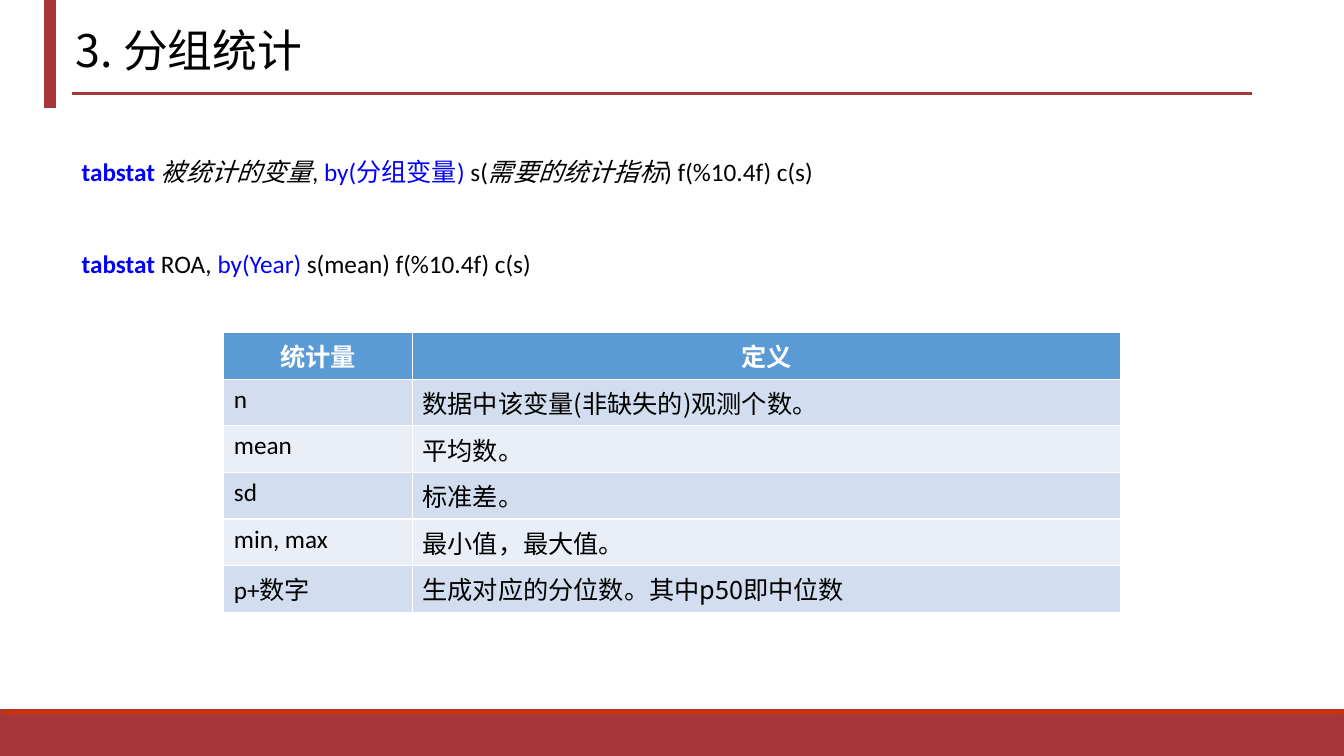
import dataclasses

import lxml.etree
import pptx
import pptx.dml.color
import pptx.enum.shapes
import pptx.enum.text
import pptx.oxml.ns
import pptx.util

Inches = pptx.util.Inches
Pt = pptx.util.Pt
Color = pptx.dml.color.RGBColor.from_string


@dataclasses.dataclass(frozen=True)
class Theme:
    red: str = "A6363A"
    orange: str = "CC3300"
    keyword: str = "0000FF"
    text: str = "000000"
    header_text: str = "FFFFFF"
    header_fill: str = "5B9BD5"
    bands: tuple = ("D2DEEF", "EAEFF7")
    latin: str = "Calibri"
    chinese: str = "Noto Sans CJK SC"
    title_size: int = 32
    body_size: int = 18


THEME = Theme()

COMMANDS = [
    [
        ("tabstat ", "keyword", "bold"),
        ("被统计的变量", "text", "italic"),
        (", ", "text", ""),
        ("by(分组变量) ", "keyword", ""),
        ("s(", "text", ""),
        ("需要的统计指标", "text", "italic"),
        (") f(%10.4f) c(s)", "text", ""),
    ],
    [
        ("tabstat", "keyword", "bold"),
        (" ROA, ", "text", ""),
        ("by(Year)", "keyword", ""),
        (" s(mean) f(%10.4f) c(s)", "text", ""),
    ],
]

STATISTICS = [
    ("统计量", "定义"),
    ("n", "数据中该变量(非缺失的)观测个数。"),
    ("mean", "平均数。"),
    ("sd", "标准差。"),
    ("min, max", "最小值，最大值。"),
    ("p+数字", "生成对应的分位数。其中p50即中位数"),
]


def place(shape, left, top, width, height):
    shape.left, shape.top = Inches(left), Inches(top)
    shape.width, shape.height = Inches(width), Inches(height)


def set_font(paragraph, size, name, color=THEME.text, bold=False):
    font = paragraph.font
    font.size = Pt(size)
    font.name = name
    font.bold = bold
    font.color.rgb = Color(color)
    properties = paragraph._p.pPr.find(pptx.oxml.ns.qn("a:defRPr"))
    east_asian = lxml.etree.SubElement(properties, pptx.oxml.ns.qn("a:ea"))
    east_asian.set("typeface", THEME.chinese)


def add_bar(slide, left, top, width, height, fill):
    bar = slide.shapes.add_shape(
        pptx.enum.shapes.MSO_SHAPE.RECTANGLE,
        Inches(left), Inches(top), Inches(width), Inches(height))
    bar.shadow.inherit = False
    bar.fill.solid()
    bar.fill.fore_color.rgb = Color(fill)
    bar.line.color.rgb = Color(THEME.red)
    bar.line.width = Pt(1)


def add_footer(slide, left, top, width, height):
    strip = 0.05
    add_bar(slide, left, top + strip, width, height - strip, THEME.red)
    add_bar(slide, left, top, width, strip, THEME.orange)


def add_heading(slide, left, top, width, height, text):
    add_bar(slide, left, top, 0.11, height, THEME.red)
    rule_top = Inches(top + 0.93)
    rule = slide.shapes.add_connector(
        pptx.enum.shapes.MSO_CONNECTOR.STRAIGHT,
        Inches(left + 0.27), rule_top, Inches(left + width), rule_top)
    rule.line.color.rgb = Color(THEME.red)
    rule.line.width = Pt(2.25)
    lxml.etree.SubElement(rule._element.spPr, pptx.oxml.ns.qn("a:effectLst"))

    title = slide.shapes.title
    place(title, left + 0.21, top - 0.02, 8.62, height + 0.02)
    title.text_frame.text = text
    title.text_frame.vertical_anchor = pptx.enum.text.MSO_ANCHOR.MIDDLE
    paragraph = title.text_frame.paragraphs[0]
    paragraph.alignment = pptx.enum.text.PP_ALIGN.LEFT
    paragraph.line_spacing = 0.9
    set_font(paragraph, THEME.title_size, THEME.chinese)


def add_commands(slide, left, top, width, height, commands):
    body = slide.placeholders[1]
    place(body, left, top, width, height)
    frame = body.text_frame
    frame.auto_size = pptx.enum.text.MSO_AUTO_SIZE.NONE
    for index, command in enumerate(commands):
        paragraph = frame.add_paragraph() if index else frame.paragraphs[0]
        paragraph.space_before = Pt(44 if index else 0)
        properties = paragraph._p.get_or_add_pPr()
        properties.set("marL", "0")
        properties.set("indent", "0")
        lxml.etree.SubElement(properties, pptx.oxml.ns.qn("a:buNone"))
        set_font(paragraph, THEME.body_size, THEME.latin)
        for text, color, style in command:
            run = paragraph.add_run()
            run.text = text
            run.font.color.rgb = Color(getattr(THEME, color))
            run.font.bold = style == "bold"
            run.font.italic = style == "italic"


def add_statistics(slide, left, top, width, height, rows):
    table = slide.shapes.add_table(
        len(rows), 2, Inches(left), Inches(top), Inches(width), Inches(height)).table
    name_width = 1.87
    table.columns[0].width = Inches(name_width)
    table.columns[1].width = Inches(width - name_width)
    for row_index, row in enumerate(rows):
        header = row_index == 0
        fill = THEME.header_fill if header else THEME.bands[(row_index - 1) % 2]
        for column_index, text in enumerate(row):
            cell = table.cell(row_index, column_index)
            cell.fill.solid()
            cell.fill.fore_color.rgb = Color(fill)
            cell.text = text
            paragraph = cell.text_frame.paragraphs[0]
            if header:
                paragraph.alignment = pptx.enum.text.PP_ALIGN.CENTER
            set_font(
                paragraph, THEME.body_size,
                THEME.chinese if header or column_index else THEME.latin,
                THEME.header_text if header else THEME.text, header)


def main():
    presentation = pptx.Presentation()
    presentation.slide_width = Inches(13.33)
    presentation.slide_height = Inches(7.5)
    slide = presentation.slides.add_slide(presentation.slide_layouts[1])
    add_footer(slide, 0, 7.04, 13.33, 0.46)
    add_heading(slide, 0.44, 0, 11.98, 1.07, "3. 分组统计")
    add_commands(slide, 0.71, 1.5, 11.71, 1.31, COMMANDS)
    add_statistics(slide, 2.22, 3.3, 8.89, 2.43, STATISTICS)
    presentation.save("out.pptx")


if __name__ == "__main__":
    main()
